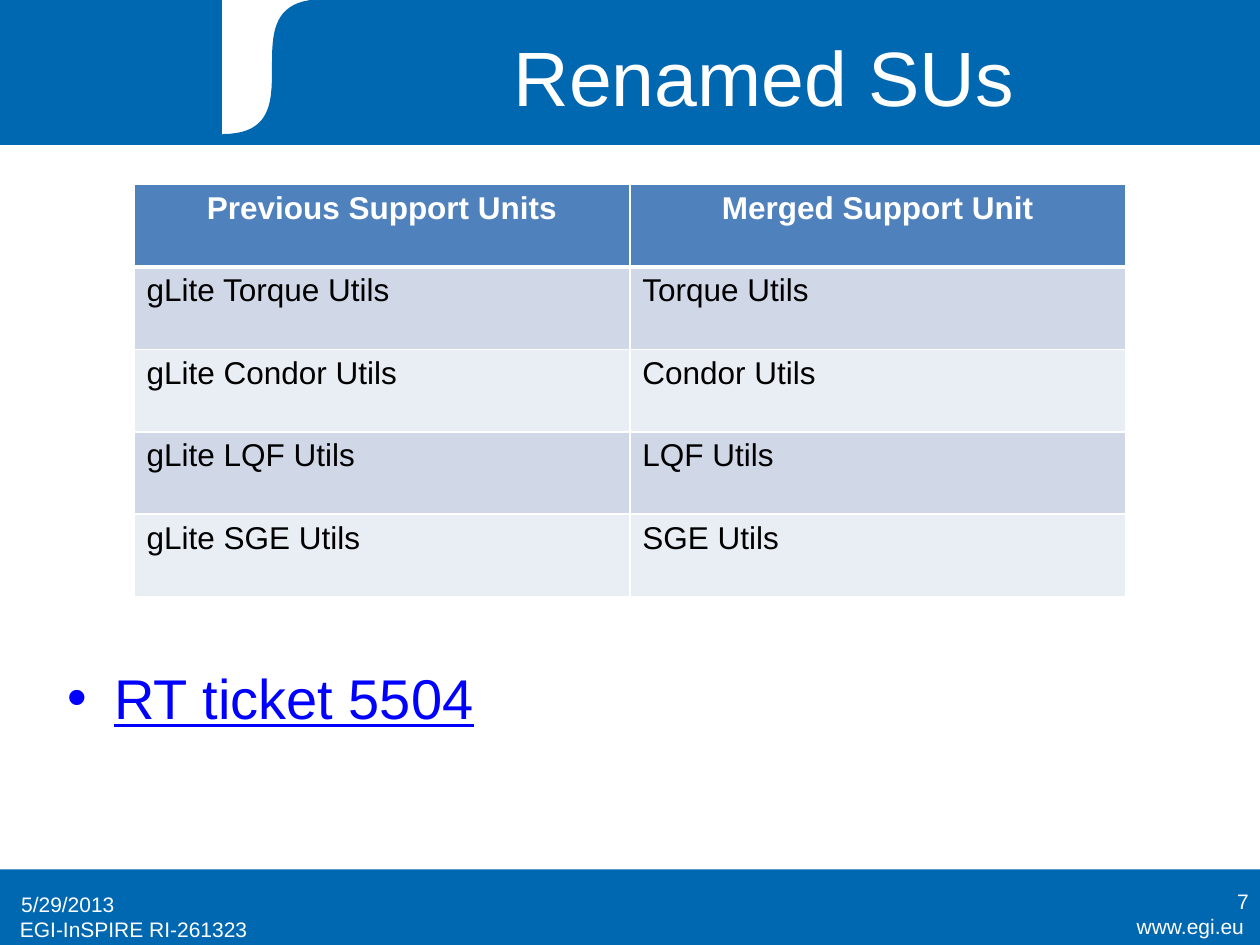
from dataclasses import dataclass

from lxml import etree
from pptx import Presentation
from pptx.dml.color import RGBColor
from pptx.enum.shapes import MSO_SHAPE
from pptx.enum.text import MSO_ANCHOR, PP_ALIGN
from pptx.oxml.ns import qn
from pptx.util import Pt

RECTANGLE = MSO_SHAPE.RECTANGLE
LEFT, CENTER, RIGHT = PP_ALIGN.LEFT, PP_ALIGN.CENTER, PP_ALIGN.RIGHT
TOP, MIDDLE = MSO_ANCHOR.TOP, MSO_ANCHOR.MIDDLE
BLUE, WHITE, BLACK, LINK = "0067B1", "FFFFFF", "000000", "0000FF"
HEADER, BAND_DARK, BAND_LIGHT = "4F81BD", "D0D8E8", "E9EDF4"
FONT = "Arial"
TITLE_ONLY = 5
WIDTH, HEIGHT = 720, 540
FINENESS = 100  # outline units per point


@dataclass
class Area:
    left: float
    top: float
    width: float
    height: float

    def lengths(self):
        return Pt(self.left), Pt(self.top), Pt(self.width), Pt(self.height)


@dataclass
class Label:
    text: str
    area: Area
    align: PP_ALIGN = LEFT
    anchor: MSO_ANCHOR = TOP
    size: float = 12
    color: str = WHITE


LABELS = [
    Label("www.egi.eu", Area(604, 518.5, 114, 22), RIGHT),
    Label("EGI-InSPIRE RI-261323", Area(4.3, 520, 180, 22)),
    Label("5/29/2013", Area(5, 502, 168, 29), LEFT, MIDDLE),
    Label("7", Area(552.6, 500.5, 168, 29), RIGHT, MIDDLE),
]
TICKET = Label("RT ticket 5504", Area(31.3, 375.4, 653, 98), size=32, color=LINK)
ROWS = [
    ("Previous Support Units", "Merged Support Unit"),
    *((f"gLite {name} Utils", f"{name} Utils")
      for name in ("Torque", "Condor", "LQF", "SGE")),
]


def rgb(value: str) -> RGBColor:
    return RGBColor.from_string(value)


def set_font(paragraph, size: float, color: str, bold: bool = False) -> None:
    font = paragraph.font
    font.name, font.size, font.bold = FONT, Pt(size), bold
    font.color.rgb = rgb(color)


def paint(shape, color: str, outlined: bool = True) -> None:
    shape.shadow.inherit = False
    shape.fill.solid()
    shape.fill.fore_color.rgb = rgb(color)
    if outlined:
        shape.line.color.rgb = rgb(color)
        shape.line.width = Pt(0.75)
    else:
        shape.line.fill.background()


def add_panel(slide, area: Area, color: str, outlined: bool = True) -> None:
    paint(slide.shapes.add_shape(RECTANGLE, *area.lengths()), color, outlined)


def add_swoosh(slide, area: Area, rise: float, steps: int = 40) -> None:
    """Blue outline whose left edge is an S-shaped cubic curve."""
    right, bottom = area.left + area.width, area.top + area.height
    points = [(right, area.top), (right, bottom)]
    for step in range(steps + 1):
        t = step / steps
        u = 1 - t
        across = 3 * u * u * t + t ** 3
        up = 3 * u * t * t + t ** 3
        points.append((area.left + rise * across, bottom - area.height * up))
    start, *others = [(x * FINENESS, y * FINENESS) for x, y in points]
    builder = slide.shapes.build_freeform(*start, scale=Pt(1) / FINENESS)
    builder.add_line_segments(others, close=True)
    paint(builder.convert_to_shape(), BLUE)


def add_label(slide, label: Label):
    box = slide.shapes.add_textbox(*label.area.lengths())
    frame = box.text_frame
    frame.word_wrap = True
    frame.vertical_anchor = label.anchor
    para = frame.paragraphs[0]
    para.text, para.alignment = label.text, label.align
    set_font(para, label.size, label.color)
    return para


def add_bullet(paragraph, indent: float) -> None:
    properties = paragraph._p.get_or_add_pPr()
    properties.set("marL", str(Pt(indent)))
    properties.set("indent", str(-Pt(indent)))
    bullet_font = etree.Element(qn("a:buFont"), typeface=FONT)
    bullet = etree.Element(qn("a:buChar"), char="•")
    properties.insert(0, bullet_font)
    properties.insert(1, bullet)


def set_borders(cell, top: float, bottom: float) -> None:
    properties = cell._tc.get_or_add_tcPr()
    for side, width in (("L", 1), ("R", 1), ("T", top), ("B", bottom)):
        line = etree.SubElement(properties, qn(f"a:ln{side}"), w=str(Pt(width)))
        fill = etree.SubElement(line, qn("a:solidFill"))
        etree.SubElement(fill, qn("a:srgbClr"), val=WHITE)


def add_units_table(slide, area: Area) -> None:
    table = slide.shapes.add_table(len(ROWS), 2, *area.lengths()).table
    for row_index, texts in enumerate(ROWS):
        table.rows[row_index].height = Pt(area.height / len(ROWS))
        heading = row_index == 0
        band = BAND_DARK if row_index % 2 else BAND_LIGHT
        for column_index, text in enumerate(texts):
            cell = table.cell(row_index, column_index)
            set_borders(cell, 3 if row_index == 1 else 1, 3 if heading else 1)
            cell.fill.solid()
            cell.fill.fore_color.rgb = rgb(HEADER if heading else band)
            para = cell.text_frame.paragraphs[0]
            para.text = text
            para.alignment = CENTER if heading else LEFT
            set_font(para, 18, WHITE if heading else BLACK, heading)


def set_title(slide, text: str, area: Area) -> None:
    title = slide.shapes.title
    title.left, title.top, title.width, title.height = area.lengths()
    frame = title.text_frame
    frame.word_wrap = True
    frame.vertical_anchor = MIDDLE
    para = frame.paragraphs[0]
    para.text, para.alignment = text, CENTER
    set_font(para, 44, WHITE)
    # Bring the title in front of the banner
    title.element.getparent().append(title.element)


def main() -> None:
    deck = Presentation()
    deck.slide_width, deck.slide_height = Pt(WIDTH), Pt(HEIGHT)
    slide = deck.slides.add_slide(deck.slide_layouts[TITLE_ONLY])

    # Footer and banner
    emblem = Area(127.3, 0, 142, 77)
    add_panel(slide, Area(0, 496.8, WIDTH, 43.2), BLUE, outlined=False)
    add_panel(slide, Area(0, 0, WIDTH, 82.3), BLUE)
    add_panel(slide, emblem, WHITE)
    add_swoosh(slide, emblem, rise=57)
    set_title(slide, "Renamed SUs", Area(167.3, 9, 538.6, 68.4))

    # Table and ticket bullet
    add_units_table(slide, Area(76.6, 105.5, 566.6, 235.5))
    ticket = add_label(slide, TICKET)
    add_bullet(ticket, 27)
    span = ticket.runs[0]
    span.font.underline = True
    span.font.color.rgb = rgb(LINK)

    # Footer texts
    for label in LABELS:
        add_label(slide, label)

    deck.save("out.pptx")


if __name__ == "__main__":
    main()
